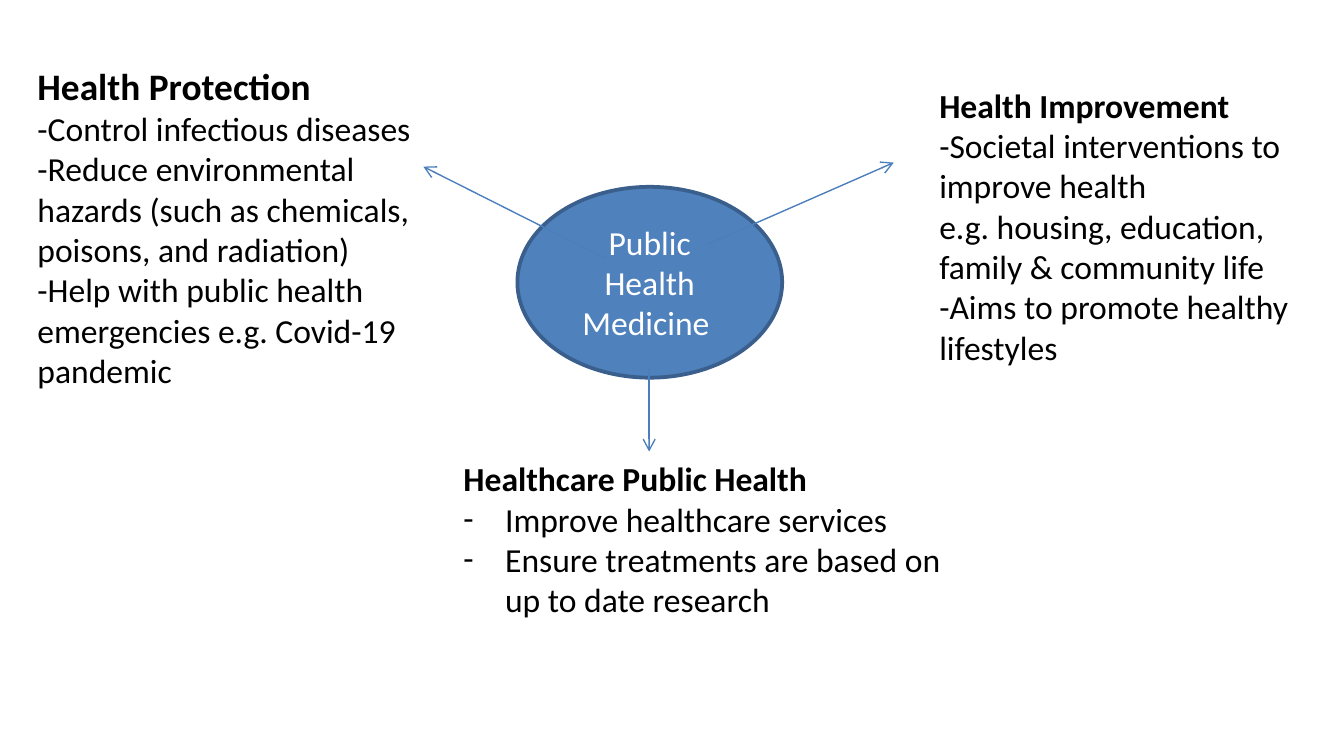
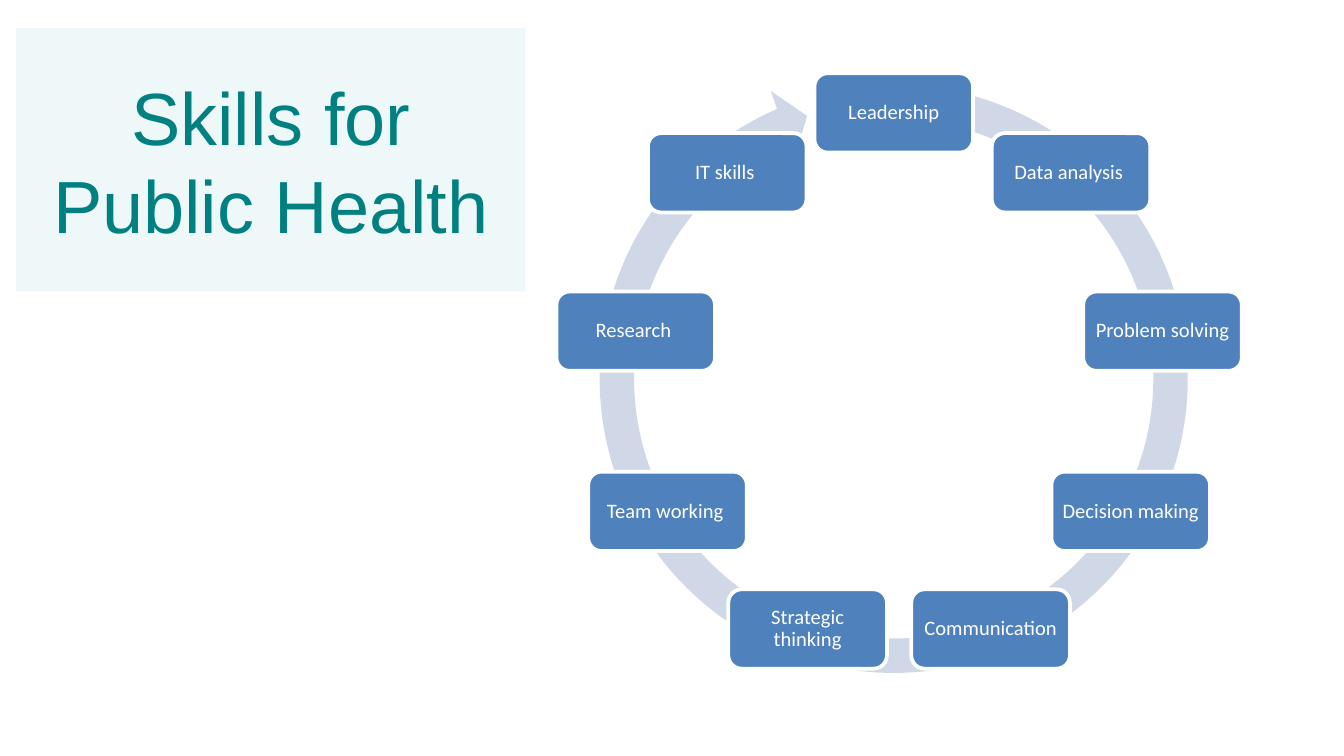
from math import cos, radians, sin

from lxml import etree
from pptx import Presentation
from pptx.dml.color import RGBColor
from pptx.enum.shapes import MSO_CONNECTOR, MSO_SHAPE
from pptx.enum.text import MSO_ANCHOR, MSO_AUTO_SIZE, PP_ALIGN
from pptx.oxml.ns import qn
from pptx.util import Inches, Pt

LINE = MSO_CONNECTOR.STRAIGHT
OVAL, RECT = MSO_SHAPE.OVAL, MSO_SHAPE.RECTANGLE
ROUND, LOOP = MSO_SHAPE.ROUNDED_RECTANGLE, MSO_SHAPE.CIRCULAR_ARROW
MID, MIDDLE = PP_ALIGN.CENTER, MSO_ANCHOR.MIDDLE
GROW = MSO_AUTO_SIZE.SHAPE_TO_FIT_TEXT

# Content: hub with three branches
HUB = "Public Health Medicine "
FIELDS = [
    {"at": (3.35, 3.36, 3.75, 1.31), "head": "Healthcare Public Health",
     "size": "body", "dash": True,
     "items": ["Improve healthcare services",
               "Ensure treatments are based on up to date research"]},
    {"at": (6.89, 0.58, 2.91, 2.22), "head": "Health Improvement",
     "size": "body", "dash": False,
     "items": ["-Societal interventions to improve health",
               "e.g. housing, education, family & community life",
               "-Aims to promote healthy lifestyles"]},
    {"at": (0.18, 0.42, 3.15, 2.56), "head": "Health Protection",
     "size": "lead", "dash": False,
     "items": ["-Control infectious diseases",
               "-Reduce environmental hazards (such as chemicals, poisons, "
               "and radiation)",
               "-Help with public health emergencies e.g. Covid-19 pandemic"]},
]
ARROWS = [(5.26, 1.82, 6.65, 1.21), (4.5, 1.92, 3.15, 1.24),
          (4.83, 2.73, 4.83, 3.36)]

# Content: ring of skills, clockwise from the top
TITLE = "Skills for Public Health"
SKILLS = ["Leadership", "Data analysis ", "Problem solving",
          "Decision making", "Communication", "Strategic thinking",
          "Team working ", "Research ", "IT skills "]
BEND = (0.055, 3.307, 147.771, 168.02, 0.058)

# Theme
THEME = {
    "blue": "4F81BD", "edge": "3A5F8C", "arrow": "4B7EBC", "ring": "D0D8E8",
    "pale": "EEF8F8", "teal": "008080", "white": "FFFFFF", "black": "000000",
    "font": "Calibri", "face": "Arial",
    "title": 39.6, "lead": 20, "body": 18, "card": 11,
}


def tint(name):
    return RGBColor.from_string(THEME[name])


def place(box):
    return [Inches(v) for v in box]


def apply(obj, form):
    for key, val in form.items():
        setattr(obj, key, val)


def style(para, size, color="black", bold=False, face="font"):
    apply(para.font, {"size": Pt(THEME[size]), "name": THEME[face],
                      "bold": bold})
    para.font.color.rgb = tint(color)


def draw(slide, kind, box, fill, edge=None):
    shape = slide.shapes.add_shape(kind, *place(box))
    shape.shadow.inherit = False
    shape.fill.solid()
    shape.fill.fore_color.rgb = tint(fill)
    if edge:
        shape.line.color.rgb = tint(edge)
        shape.line.width = Pt(2)
    else:
        shape.line.fill.background()
    return shape


def label(shape, text, size, color="white", face="font", space=None, pad=None):
    frame = shape.text_frame
    apply(frame, {"word_wrap": True, "vertical_anchor": MIDDLE})
    if pad is not None:
        sides = ("left", "top", "right", "bottom")
        apply(frame, {f"margin_{side}": Inches(pad) for side in sides})
    para = frame.paragraphs[0]
    para.text = text
    apply(para, {"alignment": MID, "line_spacing": space})
    style(para, size, color, face=face)


def dash(para):
    prop = para._p.get_or_add_pPr()
    prop.set("marL", str(Inches(0.31)))
    prop.set("indent", str(-Inches(0.31)))
    etree.SubElement(prop, qn("a:buFont")).set("typeface", THEME["font"])
    etree.SubElement(prop, qn("a:buChar")).set("char", "-")


def arrow(slide, ends):
    link = slide.shapes.add_connector(LINE, *place(ends))
    link.line.color.rgb = tint("arrow")
    link.line.width = Pt(0.75)
    tip = etree.SubElement(link.line._get_or_add_ln(), qn("a:tailEnd"))
    tip.set("type", "arrow")
    etree.SubElement(link._element.spPr, qn("a:effectLst"))


def notes(slide, field):
    frame = slide.shapes.add_textbox(*place(field["at"])).text_frame
    apply(frame, {"word_wrap": True, "auto_size": GROW})
    head = frame.paragraphs[0]
    head.text = field["head"]
    style(head, field["size"], bold=True)
    for item in field["items"]:
        para = frame.add_paragraph()
        para.text = item
        if field["dash"]:
            dash(para)
        style(para, "body")


def fields(slide):
    hub = draw(slide, OVAL, (3.85, 1.39, 1.97, 1.42), "blue", "edge")
    label(hub, HUB, "body")
    for ends in ARROWS:
        arrow(slide, ends)
    for field in FIELDS:
        notes(slide, field)


def skills(slide):
    band = draw(slide, RECT, (0.12, 0.21, 3.79, 1.96), "pale")
    label(band, TITLE, "title", "teal", "face", 1.0)
    ring = draw(slide, LOOP, (4.32, 0.49, 4.66, 4.66), "ring")
    for num, val in enumerate(BEND):
        ring.adjustments[num] = val
    # Cards sit at equal angles; the first is nudged off the arrow tip
    wide, high, rad = 1.18, 0.59, 1.99
    for num, name in enumerate(SKILLS):
        turn = radians(360 / len(SKILLS) * num)
        dx, dy = (0, 0) if num else (-0.04, 0.02)
        left = 6.69 + dx + rad * sin(turn) - wide / 2
        top = 2.81 + dy - rad * cos(turn) - high / 2
        card = draw(slide, ROUND, (left, top, wide, high), "blue", "white")
        label(card, name, "card", space=0.9, pad=0.05)


def main():
    deck = Presentation()
    # Widescreen, 16 to 9
    wide = Inches(10)
    apply(deck, {"slide_width": wide, "slide_height": wide * 9 // 16})
    for build in (fields, skills):
        build(deck.slides.add_slide(deck.slide_layouts[6]))
    deck.save("out.pptx")


if __name__ == "__main__":
    main()
